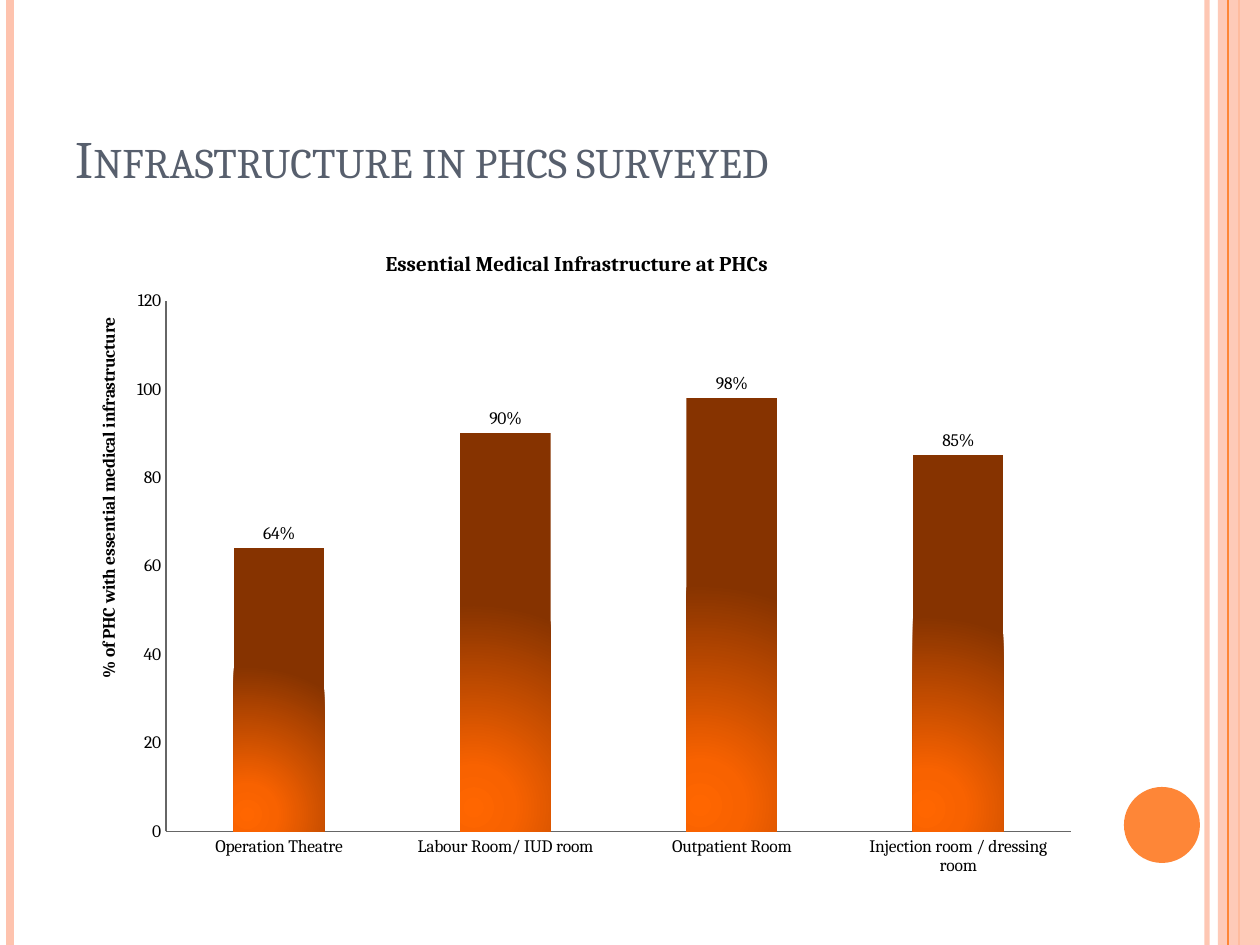
from lxml import etree
from pptx import Presentation
from pptx.chart.data import CategoryChartData
from pptx.dml.color import RGBColor
from pptx.enum.chart import XL_CHART_TYPE, XL_LABEL_POSITION, XL_TICK_MARK
from pptx.enum.shapes import MSO_CONNECTOR, MSO_SHAPE
from pptx.enum.text import MSO_ANCHOR
from pptx.oxml import parse_xml
from pptx.oxml.ns import nsdecls, qn
from pptx.util import Pt

COLUMN = XL_CHART_TYPE.COLUMN_CLUSTERED
OUTSIDE = XL_LABEL_POSITION.OUTSIDE_END
NO_TICK = XL_TICK_MARK.NONE
STRAIGHT = MSO_CONNECTOR.STRAIGHT
RECT, OVAL = MSO_SHAPE.RECTANGLE, MSO_SHAPE.OVAL
BOTTOM = MSO_ANCHOR.BOTTOM

FONT = "Cambria"
PEACH, ORANGE = "FEC3AE", "FE8637"
WIDE, HIGH = 1260, 945
ROOMS = {
    "Operation Theatre": 64,
    "Labour Room/ IUD room": 90,
    "Outpatient Room": 98,
    "Injection room / dressing room": 85,
}


def px(count):
    return round(count * 914400 / 126)


def hue(code):
    return RGBColor.from_string(code)


def fade(node, percent):
    """Set the opacity of the first colour below node."""
    color = node.find(".//" + qn("a:srgbClr"))
    etree.SubElement(color, qn("a:alpha"), val=str(percent * 1000))


def style(font, size, color, bold=False):
    font.name, font.size, font.bold = FONT, Pt(size), bold
    font.color.rgb = hue(color)


def add_rule(slide, x, color, width, alpha=100):
    rule = slide.shapes.add_connector(STRAIGHT, px(x), 0, px(x), px(HIGH))
    rule.line.color.rgb = hue(color)
    rule.line.width = Pt(width)
    props = rule._element.spPr
    if alpha < 100:
        fade(props, alpha)
    etree.SubElement(props, qn("a:effectLst"))


def add_block(slide, kind, box, color, alpha=100):
    block = slide.shapes.add_shape(kind, *map(px, box))
    block.shadow.inherit = False
    block.fill.solid()
    block.fill.fore_color.rgb = hue(color)
    block.line.fill.background()
    if alpha < 100:
        fade(block._element.spPr, alpha)


def add_title(slide, text, box):
    frame = slide.shapes.add_textbox(*map(px, box)).text_frame
    frame.word_wrap = True
    frame.vertical_anchor = BOTTOM
    run = frame.paragraphs[0].add_run()
    run.text = text
    style(run.font, 30, "575F6D")
    run.font._element.set("cap", "small")


def place(node, index, **parts):
    """Give a chart part a manual layout, in fractions of the chart."""
    for old in node.findall(qn("c:layout")):
        node.remove(old)
    inner = '<c:layoutTarget val="inner"/>' if "w" in parts else ""
    sizes = "".join(f'<c:{key} val="{val}"/>' for key, val in parts.items())
    node.insert(index, parse_xml(
        f'<c:layout {nsdecls("c")}><c:manualLayout>{inner}'
        f'<c:xMode val="edge"/><c:yMode val="edge"/>{sizes}'
        '</c:manualLayout></c:layout>'))


def caption(title, text, size, x, y):
    run = title.text_frame.paragraphs[0].add_run()
    run.text = text
    style(run.font, size, "000000", True)
    place(title._element, 1, x=x, y=y)


def glow(series):
    """Fill the bars with a round gradient that starts at the lower left."""
    series.format.fill.solid()
    props = series._element.find(qn("c:spPr"))
    props.replace(props.find(qn("a:solidFill")), parse_xml(
        f'<a:gradFill {nsdecls("a")} rotWithShape="1"><a:gsLst>'
        '<a:gs pos="0"><a:srgbClr val="FF6600"/></a:gs>'
        '<a:gs pos="20000"><a:srgbClr val="F86200"/></a:gs>'
        '<a:gs pos="100000"><a:srgbClr val="863300"/></a:gs></a:gsLst>'
        '<a:path path="circle"><a:fillToRect l="15000" t="94000" '
        'r="85000" b="6000"/></a:path></a:gradFill>'))


def add_bars(slide, box):
    data = CategoryChartData(number_format="0")
    data.categories = list(ROOMS)
    data.add_series("Series 1", list(ROOMS.values()))
    chart = slide.shapes.add_chart(COLUMN, *map(px, box), data).chart
    style(chart.font, 10, "000000")
    chart.has_legend = False
    chart.has_title = True
    caption(chart.chart_title, "Essential Medical Infrastructure at PHCs",
            12, 0.31, 0.04)

    for axis in (chart.category_axis, chart.value_axis):
        axis.major_tick_mark = axis.minor_tick_mark = NO_TICK
        axis.has_major_gridlines = False
        axis.format.line.color.rgb = hue("666666")
    scale = chart.value_axis
    scale.minimum_scale, scale.maximum_scale = 0, 120
    scale.major_unit = 20
    scale.has_title = True
    caption(scale.axis_title, "% of PHC with essential medical infrastructure",
            10, 0.03, 0.14)

    plot = chart.plots[0]
    plot.gap_width = 150
    plot.vary_by_categories = False
    plot.has_data_labels = True
    labels = plot.data_labels
    labels.show_value = True
    labels.number_format = '0"%"'
    labels.number_format_is_linked = False
    labels.position = OUTSIDE
    style(labels.font, 10, "000000")
    glow(plot.series[0])
    area = chart._chartSpace.find(".//" + qn("c:plotArea"))
    place(area, 0, x=0.1, y=0.12, w=0.88, h=0.79)


def main():
    deck = Presentation()
    deck.slide_width, deck.slide_height = px(WIDE), px(HIGH)
    slide = deck.slides.add_slide(deck.slide_layouts[6])
    add_rule(slide, 1207, PEACH, 3, 93)
    add_rule(slide, 10, PEACH, 4.5)
    add_rule(slide, 1239, ORANGE, 1.5)
    add_block(slide, RECT, (1218, 0, 42, HIGH), PEACH, 87)
    add_rule(slide, 1228, ORANGE, 0.75)
    add_block(slide, OVAL, (1124, 787, 76, 76), ORANGE)
    add_title(slide, "Infrastructure in phcs surveyed", (63, 38, 1029, 157))
    add_bars(slide, (63, 220, 1029, 672))
    deck.save("out.pptx")


if __name__ == "__main__":
    main()
